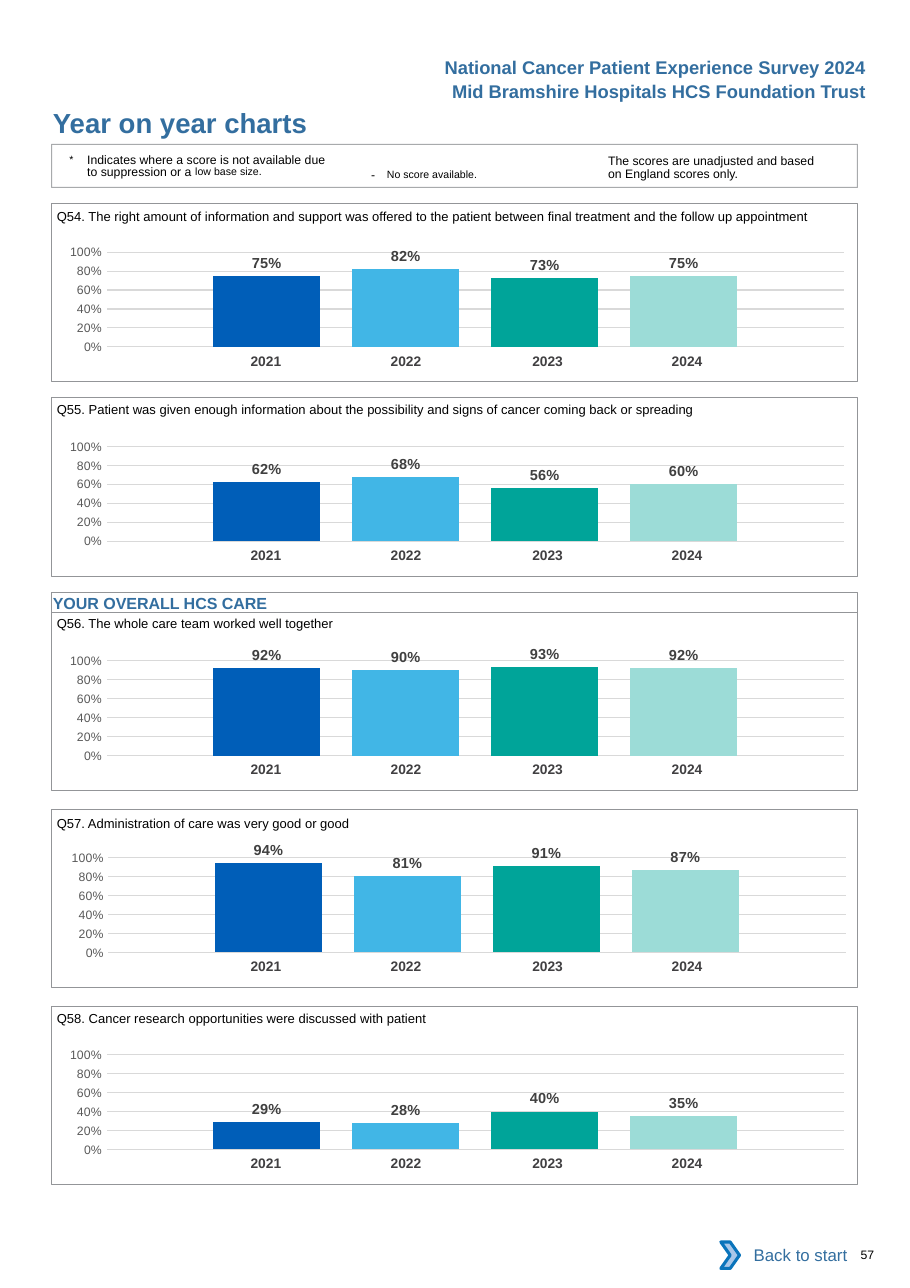
import typing

import lxml.etree
import pptx
import pptx.chart.data
import pptx.dml.color
import pptx.enum.chart
import pptx.enum.shapes
import pptx.enum.text
import pptx.oxml.ns
import pptx.util

Cm = pptx.util.Cm
Pt = pptx.util.Pt
ALIGN = pptx.enum.text.PP_ALIGN
ANCHOR = pptx.enum.text.MSO_ANCHOR
SHAPE = pptx.enum.shapes.MSO_SHAPE
qn = pptx.oxml.ns.qn

BLUE = "336E9F"
FRAME = "939598"
LEFT, WIDTH = 1.19, 18.58
YEAR_COLORS = {"2021": "005EB8", "2022": "41B6E6", "2023": "00A499", "2024": "9CDCD7"}
YEAR_WIDTHS = [3.23, 3.23, 3.4, 3.23]
YEAR_RIGHT_MARGINS = [0, 0, 0.1, 0.3]
PLOT_LAYOUT = {
    "layoutTarget": "inner", "xMode": "edge", "yMode": "edge",
    "x": "0.079", "y": "0.145", "w": "0.915", "h": "0.666",
}
NO_GRID_STYLE = "{2D5ABB26-0587-4C30-8999-92F81FD0307C}"


class Panel(typing.NamedTuple):
    top: float
    question_shift: float
    chart_shift: float
    question: str
    scores: list


PANELS = [
    Panel(4.69, -0.12, -0.2, "Q54. The right amount of information and support was offered to the patient "
          "between final treatment and the follow up appointment", [0.75, 0.82, 0.73, 0.75]),
    Panel(9.17, -0.15, -0.2, "Q55. Patient was given enough information about the possibility and signs "
          "of cancer coming back or spreading", [0.62, 0.68, 0.56, 0.6]),
    Panel(14.11, -0.16, -0.2, "Q56. The whole care team worked well together", [0.92, 0.9, 0.93, 0.92]),
    Panel(18.65, -0.08, -0.16, "Q57. Administration of care was very good or good", [0.94, 0.81, 0.91, 0.87]),
    Panel(23.19, -0.13, -0.2, "Q58. Cancer research opportunities were discussed with patient",
          [0.29, 0.28, 0.4, 0.35]),
]


def color(value):
    return pptx.dml.color.RGBColor.from_string(value)


def set_values(target, values):
    for name, value in values.items():
        setattr(target, name, value)


def format_font(font, size, shade, bold=False):
    set_values(font, {"name": "Arial", "size": Pt(size), "bold": bold})
    font.color.rgb = color(shade)


def box(left, top, width, height):
    return Cm(left), Cm(top), Cm(width), Cm(height)


def fill_frame(frame, runs, margins=(0, 0, 0, 0), align=ALIGN.LEFT, anchor=ANCHOR.TOP):
    left, top, right, bottom = map(Cm, margins)
    set_values(frame, {
        "word_wrap": True, "vertical_anchor": anchor, "margin_left": left,
        "margin_top": top, "margin_right": right, "margin_bottom": bottom,
    })
    paragraph = frame.paragraphs[0]
    paragraph.alignment = align
    for text, size, shade, bold, baseline in runs:
        run = paragraph.add_run()
        run.text = text
        format_font(run.font, size, shade, bold)
        if baseline:
            run.font._element.set("baseline", str(baseline * 1000))
    return paragraph


def plain(text, size, shade="000000", bold=False, baseline=0):
    return text, size, shade, bold, baseline


def add_text(slide, area, runs, **layout):
    return fill_frame(slide.shapes.add_textbox(*box(*area)).text_frame, runs, **layout)


def add_box(slide, kind, area, fill=None, line=None, line_width=0.5):
    shape = slide.shapes.add_shape(kind, *box(*area))
    shape.shadow.inherit = False
    for part, shade in ((shape.fill, fill), (shape.line.fill, line)):
        if shade:
            part.solid()
            part.fore_color.rgb = color(shade)
        else:
            part.background()
    if line:
        shape.line.width = Pt(line_width)
    return shape


def set_hanging(paragraph, indent):
    properties = paragraph._p.get_or_add_pPr()
    properties.set("marL", str(Cm(indent)))
    properties.set("indent", str(-Cm(indent)))


def add_header(slide, left, top, width):
    lines = ["National Cancer Patient Experience Survey 2024", "Mid Bramshire Hospitals HCS Foundation Trust"]
    for index, line in enumerate(lines):
        add_text(slide, (left, top + index * 0.56, width, 0.76), [plain(line, 12, BLUE, True)],
                 margins=(0.25, 0.13, 0.25, 0.13), align=ALIGN.RIGHT)
    title = slide.shapes.title
    set_values(title, dict(zip(("left", "top", "width", "height"), box(LEFT, top + 1.27, 11.43, 0.76))))
    fill_frame(title.text_frame, [plain("Year on year charts", 18, BLUE, True)], margins=(0.03, 0, 0, 0))


def add_notes_box(slide, left, top, width, height):
    unadjusted = add_text(slide, (left + 12.83, top + 0.18, 5, 0.69),
                          [plain("The scores are unadjusted and based on England scores only.", 8)],
                          margins=(0, 0.08, 0, 0))
    missing = add_text(slide, (left + 7.12, top + 0.25, 4.65, 0.61),
                       [plain("-\t", 8), plain("No score available.", 12, baseline=3)],
                       margins=(0.25, 0.13, 0.25, 0.13))
    suppressed = add_text(slide, (left + 0.41, top + 0.18, 6, 0.69), [
        plain("*\t", 12, baseline=3),
        plain("Indicates where a score is not available due to suppression or a ", 8),
        plain("low base size.", 12, baseline=7),
    ], margins=(0, 0.08, 0, 0))
    set_hanging(missing, 0.36)
    set_hanging(suppressed, 0.41)
    for paragraph in (unadjusted, suppressed):
        paragraph.line_spacing = Pt(8.1)
    frame = add_box(slide, SHAPE.RECTANGLE, (left, top, width, height), line=FRAME, line_width=0.75)
    shade = frame.line._ln.find(".//" + qn("a:srgbClr"))
    lxml.etree.SubElement(shade, qn("a:alpha")).set("val", "80000")


def add_year_table(slide, left, top):
    table = slide.shapes.add_table(1, len(YEAR_COLORS), *box(left, top, sum(YEAR_WIDTHS), 0.69)).table
    set_values(table, {"first_row": False, "horz_banding": False})
    table._tbl.tblPr.find(qn("a:tableStyleId")).text = NO_GRID_STYLE
    columns = zip(YEAR_COLORS, YEAR_WIDTHS, YEAR_RIGHT_MARGINS)
    for index, (year, width, right) in enumerate(columns):
        table.columns[index].width = Cm(width)
        cell = table.cell(0, index)
        cell.fill.background()
        set_values(cell, {"margin_left": Cm(0.25), "margin_right": Cm(right),
                          "margin_top": Cm(0.13), "margin_bottom": Cm(0.13)})
        paragraph = cell.text_frame.paragraphs[0]
        paragraph.alignment = ALIGN.CENTER
        run = paragraph.add_run()
        run.text = year
        format_font(run.font, 9, "414042", True)


def add_score_chart(slide, area, scores):
    data = pptx.chart.data.CategoryChartData(number_format="0%")
    data.categories = ["1"]
    for number, score in enumerate(scores, 1):
        data.add_series(f"Series {number}", [score])
    kind = pptx.enum.chart.XL_CHART_TYPE.COLUMN_CLUSTERED
    chart = slide.shapes.add_chart(kind, *box(*area), data).chart
    set_values(chart, {"has_title": False, "has_legend": False})
    set_values(chart.font, {"name": "Calibri", "size": Pt(10)})
    chart.category_axis.visible = False
    axis = chart.value_axis
    no_tick = pptx.enum.chart.XL_TICK_MARK.NONE
    set_values(axis, {"minimum_scale": 0, "maximum_scale": 1, "major_unit": 0.2,
                      "major_tick_mark": no_tick, "minor_tick_mark": no_tick})
    set_values(axis.tick_labels, {"number_format": "0%", "number_format_is_linked": False})
    format_font(axis.tick_labels.font, 8, "595959")
    axis.format.line.fill.background()
    gridline = axis.major_gridlines.format.line
    gridline.color.rgb = color("D9D9D9")
    gridline.width = Pt(0.75)
    plot = chart.plots[0]
    set_values(plot, {"gap_width": 200, "overlap": -30, "vary_by_categories": False})
    for series, shade in zip(plot.series, YEAR_COLORS.values()):
        series.format.fill.solid()
        series.format.fill.fore_color.rgb = color(shade)
        labels = series.data_labels
        set_values(labels, {"show_value": True, "number_format": "0%", "number_format_is_linked": False,
                            "position": pptx.enum.chart.XL_LABEL_POSITION.OUTSIDE_END})
        format_font(labels.font, 9.5, "404040", True)
    plot_area = chart._chartSpace.find(".//" + qn("c:plotArea"))
    for layout in plot_area.findall(qn("c:layout")):
        plot_area.remove(layout)
    layout = lxml.etree.Element(qn("c:layout"))
    manual = lxml.etree.SubElement(layout, qn("c:manualLayout"))
    for name, value in PLOT_LAYOUT.items():
        lxml.etree.SubElement(manual, qn("c:" + name)).set("val", value)
    plot_area.insert(0, layout)


def add_panel(slide, panel, left, width):
    top = panel.top
    add_text(slide, (left + 0.12, top + panel.question_shift, width - 0.12, 0.61),
             [plain(panel.question, 8.5)], margins=(0, 0.23, 0, 0))
    add_year_table(slide, left + 3.2, top + 3.33)
    add_score_chart(slide, (left + panel.chart_shift, top + 0.65, width, 3.28), panel.scores)
    add_box(slide, SHAPE.RECTANGLE, (left, top, width, 4.11), line=FRAME)


def add_section_heading(slide, left, top, width, height):
    shape = add_box(slide, SHAPE.RECTANGLE, (left, top, width, height), line=FRAME)
    fill_frame(shape.text_frame, [plain("YOUR OVERALL HCS CARE", 10.5, BLUE, True)], margins=(0.03, 0.03, 0, 0))


def add_footer(slide, left, top):
    button = add_box(slide, SHAPE.RECTANGLE, (left + 0.17, top, 3, 1.07), fill="FFFFFF")
    fill_frame(button.text_frame, [plain("Back to start", 11, BLUE)],
               margins=(0.25, 0.13, 0.25, 0.13), align=ALIGN.RIGHT, anchor=ANCHOR.MIDDLE)
    add_box(slide, SHAPE.CHEVRON, (left, top + 0.23, 0.43, 0.61), "A8C7E9", "0A74BB", 2)
    add_text(slide, (left + 2.97, top + 0.36, 1.3, 0.33), [plain("57", 8)], margins=(0.25, 0, 0, 0))


def main():
    presentation = pptx.Presentation()
    set_values(presentation, {"slide_width": Cm(20.98), "slide_height": Cm(29.69)})
    slide = presentation.slides.add_slide(presentation.slide_layouts[5])
    add_header(slide, 9.96, 1.17, 10.26)
    add_notes_box(slide, LEFT, 3.33, WIDTH, 0.99)
    add_section_heading(slide, LEFT, 13.66, WIDTH, 0.45)
    for panel in PANELS:
        add_panel(slide, panel, LEFT, WIDTH)
    add_footer(slide, 16.62, 28.4)
    presentation.save("out.pptx")


if __name__ == "__main__":
    main()
